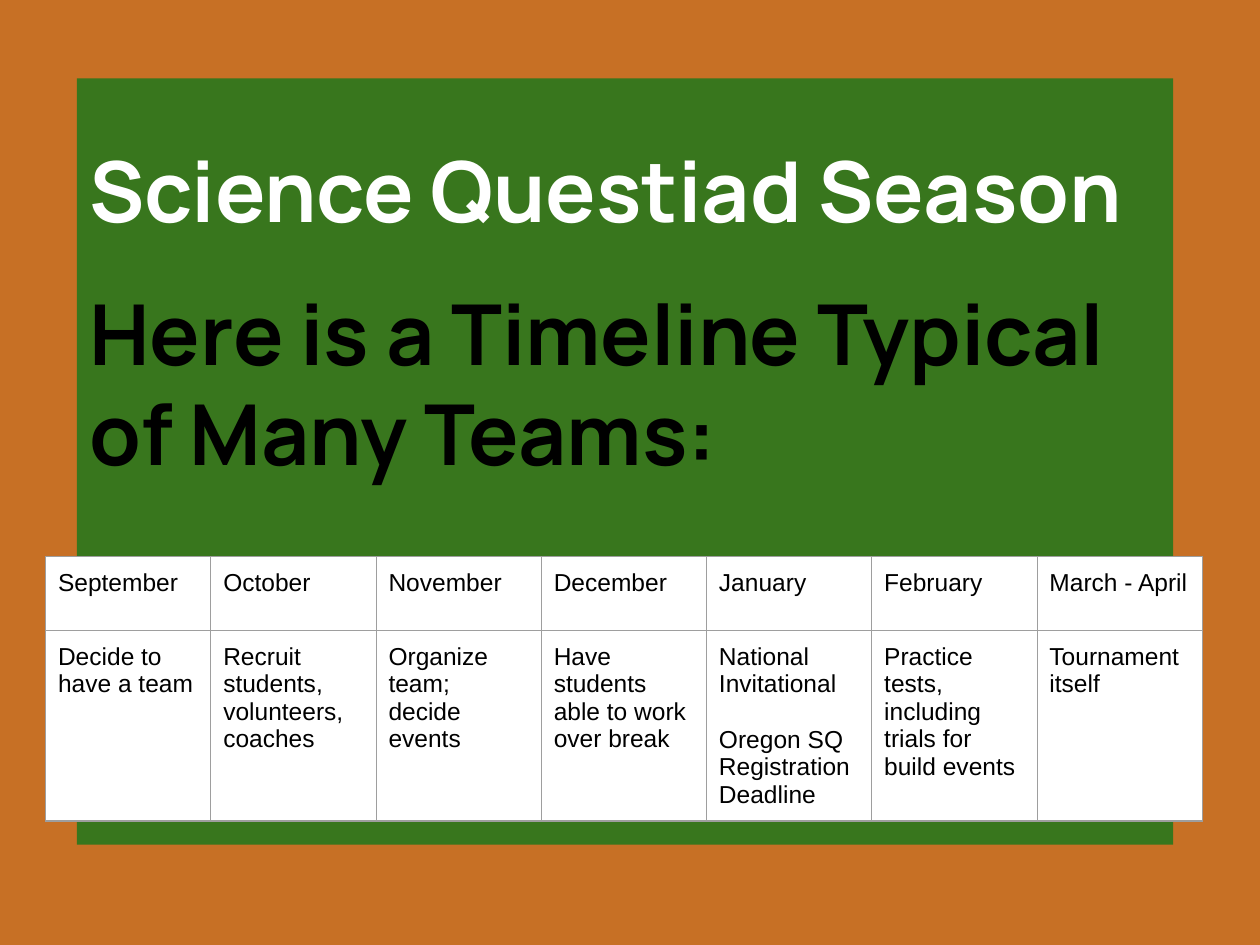
from dataclasses import dataclass

from lxml import etree
from pptx import Presentation
from pptx.dml.color import RGBColor
from pptx.enum.text import MSO_ANCHOR, MSO_AUTO_SIZE, PP_ALIGN
from pptx.oxml.ns import qn
from pptx.util import Cm, Pt

TOP, LEFT, NO_FIT = MSO_ANCHOR.TOP, PP_ALIGN.LEFT, MSO_AUTO_SIZE.NONE
TITLE_ONLY = 5


@dataclass(frozen=True)
class Theme:
    background: str = "C77025"
    panel: str = "38761D"
    paper: str = "FFFFFF"
    ink: str = "000000"
    border: str = "9E9E9E"
    title_font: str = "Manrope"
    body_font: str = "Arial"
    title_size: int = 48
    title_leading: int = 57
    body_size: int = 14
    border_width: float = 0.75


THEME = Theme()
INSET = Cm(0.25)
TITLE_LINES = [
    ("Science Questiad Season", THEME.paper, 0),
    ("Here is a Timeline Typical of Many Teams:", THEME.ink, 25),
]
TIMELINE = [
    ("September", ["Decide to have a team"]),
    ("October", ["Recruit students, volunteers, coaches"]),
    ("November", ["Organize team; decide events"]),
    ("December", ["Have students able to work over break"]),
    ("January", ["National Invitational", "Oregon SQ Registration Deadline"]),
    ("February", ["Practice tests, including trials for build events"]),
    ("March - April", ["Tournament itself"]),
]


def paint(fill, color):
    fill.solid()
    fill.fore_color.rgb = RGBColor.from_string(color)


def add_run(p, text, font, size, color, bold=False):
    r = p.add_run()
    r.text = text
    r.font.name, r.font.size, r.font.bold = font, Pt(size), bold
    r.font.color.rgb = RGBColor.from_string(color)


def paragraph(tf, index):
    return tf.add_paragraph() if index else tf.paragraphs[0]


def border_cell(cell):
    tc_pr = cell._tc.get_or_add_tcPr()
    for i, side in enumerate(("lnL", "lnR", "lnT", "lnB")):
        ln = etree.Element(qn(f"a:{side}"), w=str(Pt(THEME.border_width)))
        fill = etree.SubElement(ln, qn("a:solidFill"))
        etree.SubElement(fill, qn("a:srgbClr"), val=THEME.border)
        tc_pr.insert(i, ln)  # borders come before the fill


def fill_cell(cell, lines):
    cell.margin_left = cell.margin_right = INSET
    cell.margin_top = cell.margin_bottom = INSET
    cell.vertical_anchor = TOP
    paint(cell.fill, THEME.paper)
    border_cell(cell)
    for i, line in enumerate(lines):
        p = paragraph(cell.text_frame, i)
        p.space_before = Pt(16 if i else 0)
        add_run(p, line, THEME.body_font, THEME.body_size, THEME.ink)


def title_panel(s, left, top, width, height):
    sp = s.shapes.title
    sp.left, sp.top, sp.width, sp.height = left, top, width, height
    paint(sp.fill, THEME.panel)
    tf = sp.text_frame
    tf.word_wrap, tf.auto_size, tf.vertical_anchor = True, NO_FIT, TOP
    tf.margin_left = tf.margin_right = tf.margin_bottom = INSET
    tf.margin_top = Cm(1.23)
    for i, (text, color, gap) in enumerate(TITLE_LINES):
        p = paragraph(tf, i)
        p.alignment = LEFT
        p.line_spacing, p.space_before = Pt(THEME.title_leading), Pt(gap)
        add_run(p, text, THEME.title_font, THEME.title_size, color, bold=True)


def timeline_table(s, left, top, width, row_heights):
    frame = s.shapes.add_table(len(row_heights), len(TIMELINE), left, top,
                               width, sum(row_heights))
    table = frame.table
    table.first_row = table.horz_banding = False
    for row, height in zip(table.rows, row_heights):
        row.height = height
    for col, (month, tasks) in enumerate(TIMELINE):
        table.columns[col].width = width // len(TIMELINE)
        fill_cell(table.cell(0, col), [month])
        fill_cell(table.cell(1, col), tasks)


def main():
    prs = Presentation()
    prs.slide_width, prs.slide_height = Cm(25.4), Cm(19.05)
    s = prs.slides.add_slide(prs.slide_layouts[TITLE_ONLY])
    paint(s.background.fill, THEME.background)
    title_panel(s, Cm(1.55), Cm(1.58), Cm(22.1), Cm(15.45))
    timeline_table(s, Cm(0.92), Cm(11.22), Cm(23.32), [Cm(1.49), Cm(3.83)])
    prs.save("out.pptx")


if __name__ == "__main__":
    main()
